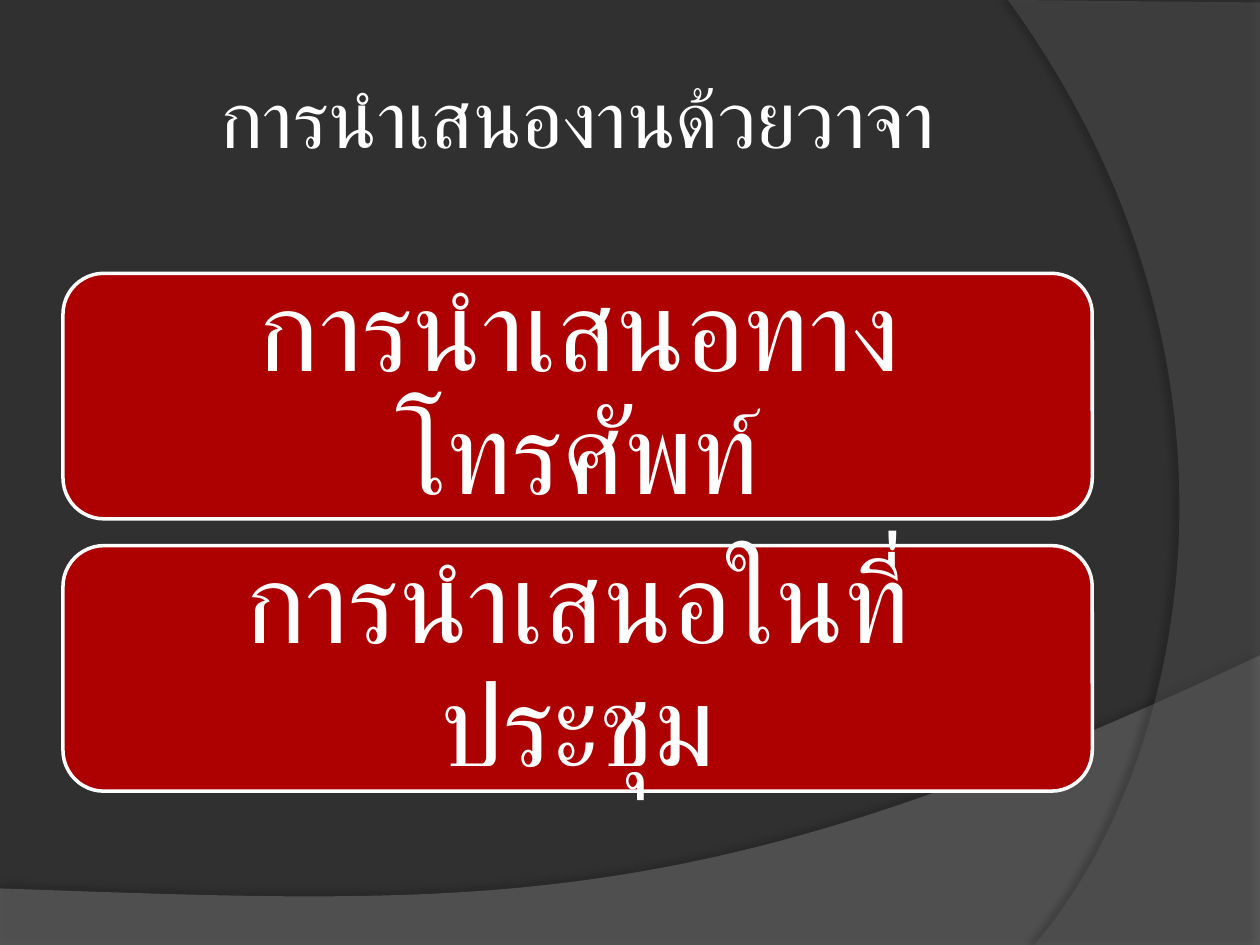
"""Build a Thai slide on spoken presentations: a title and two topic cards over curved bands."""
from lxml import etree
from pptx import Presentation
from pptx.dml.color import RGBColor
from pptx.enum.shapes import MSO_SHAPE
from pptx.enum.text import MSO_ANCHOR, PP_ALIGN
from pptx.oxml.ns import qn
from pptx.util import Cm, Pt

ROUNDED = MSO_SHAPE.ROUNDED_RECTANGLE
MIDDLE = MSO_ANCHOR.MIDDLE
CENTER = PP_ALIGN.CENTER
COLORS = {"background": "303030", "wave": "7F7F7F", "arc": "5E5E5E",
          "card": "AD0101", "white": "FFFFFF", "shadow": "000000"}
FONT = "Arial"
CURVE_STEPS = 60


def bezier(start, control_1, control_2, end):
    points = []
    for step in range(CURVE_STEPS + 1):
        t = step / CURVE_STEPS
        weights = ((1 - t) ** 3, 3 * t * (1 - t) ** 2, 3 * t ** 2 * (1 - t), t ** 3)
        corners = (start, control_1, control_2, end)
        points.append(tuple(sum(w * c[axis] for w, c in zip(weights, corners))
                            for axis in (0, 1)))
    return points


def style_text(frame, size, inset):
    frame.word_wrap = True
    frame.vertical_anchor = MIDDLE
    frame.margin_left = frame.margin_right = Cm(inset)
    frame.margin_top = frame.margin_bottom = Cm(inset)
    paragraph = frame.paragraphs[0]
    paragraph.alignment = CENTER
    paragraph.font.name = FONT
    paragraph.font.size = Pt(size)
    paragraph.font.color.rgb = RGBColor.from_string(COLORS["white"])
    return paragraph


prs = Presentation()
prs.slide_width, prs.slide_height = Cm(25.4), Cm(19.05)
slide = prs.slides.add_slide(prs.slide_layouts[5])
background = slide.background.fill
background.solid()
background.fore_color.rgb = RGBColor.from_string(COLORS["background"])

wave = [(0, 19.08), (25.4, 19.08)] + bezier(
    (25.4, 13.21), (14.2, 18.52), (9.93, 18.26), (0, 17.91))
arc = [(25.4, 0.05), (25.4, 19.05)] + bezier(
    (20.85, 19.05), (23.75, 15.72), (25.86, 7.62), (20.32, 0))
bands = [("wave", wave, 45, 35, 3.5, 270), ("arc", arc, 40, 45, 4, 180)]

for color, outline, opacity, shadow_opacity, distance, angle in bands:
    builder = slide.shapes.build_freeform(Cm(outline[0][0]), Cm(outline[0][1]))
    builder.add_line_segments([(Cm(x), Cm(y)) for x, y in outline[1:]], close=True)
    band = builder.convert_to_shape()
    band.fill.solid()
    band.fill.fore_color.rgb = RGBColor.from_string(COLORS[color])
    band.line.fill.background()
    fill_color = band.fill._xPr.find(qn("a:solidFill"))[0]
    etree.SubElement(fill_color, qn("a:alpha"), val=str(opacity * 1000))
    band.shadow.inherit = False
    effects = band._element.spPr.find(qn("a:effectLst"))
    shadow = etree.SubElement(effects, qn("a:outerShdw"), blurRad=str(Pt(4)),
                              dist=str(Pt(distance)), dir=str(angle * 60000),
                              algn="ctr", rotWithShape="0")
    shadow_color = etree.SubElement(shadow, qn("a:srgbClr"), val=COLORS["shadow"])
    etree.SubElement(shadow_color, qn("a:alpha"), val=str(shadow_opacity * 1000))

title = slide.shapes.title
title.left, title.top, title.width, title.height = Cm(1.27), Cm(0.76), Cm(20.75), Cm(3.18)
title.text_frame.text = "การนำเสนองานด้วยวาจา"
style_text(title.text_frame, 46, 0.13)

for index, topic in enumerate(["การนำเสนอทางโทรศัพท์", "การนำเสนอในที่ประชุม"]):
    card = slide.shapes.add_shape(
        ROUNDED, Cm(1.27), Cm(5.51 + index * 5.49), Cm(20.75), Cm(4.95))
    card.shadow.inherit = False
    card.fill.solid()
    card.fill.fore_color.rgb = RGBColor.from_string(COLORS["card"])
    card.line.color.rgb = RGBColor.from_string(COLORS["white"])
    card.line.width = Pt(2)
    card.text_frame.text = topic
    topic_line = style_text(card.text_frame, 65, 0.69)
    topic_line.line_spacing = 0.9

prs.save("out.pptx")
